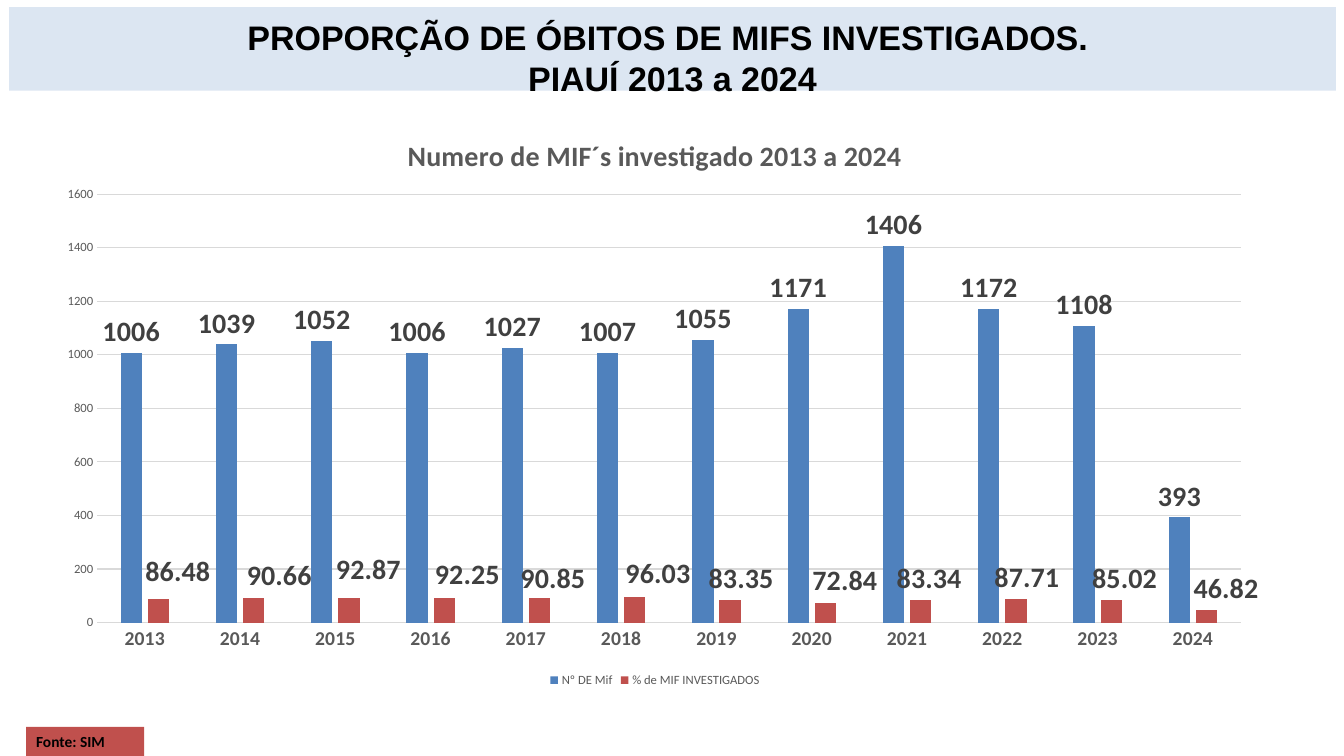
from lxml import etree
from pptx import Presentation
from pptx.chart.data import CategoryChartData
from pptx.dml.color import RGBColor
from pptx.enum.chart import XL_CHART_TYPE, XL_LABEL_POSITION, XL_LEGEND_POSITION, XL_TICK_MARK
from pptx.enum.shapes import MSO_SHAPE
from pptx.enum.text import MSO_ANCHOR, PP_ALIGN
from pptx.oxml.ns import qn
from pptx.util import Inches, Pt

HEADING = "PROPORÇÃO DE ÓBITOS DE MIFS INVESTIGADOS. \vPIAUÍ 2013 a 2024"
CHART_TITLE = "Numero de MIF´s investigado 2013 a 2024"
SOURCE = "Fonte: SIM"
YEARS = [str(year) for year in range(2013, 2025)]
SERIES = [
    ("Nº DE Mif", "4F81BD", [1006, 1039, 1052, 1006, 1027, 1007, 1055, 1171, 1406, 1172, 1108, 393]),
    ("% de MIF INVESTIGADOS", "C0504D",
     [86.48, 90.66, 92.87, 92.25, 90.85, 96.03, 83.35, 72.84, 83.34, 87.71, 85.02, 46.82]),
]
LABEL_SHIFTS = [
    (1.6, -1.2), (2.1, -0.3), (1.6, -1.2), (1.9, -0.3), (1.1, 0.3), (1.9, -0.3),
    (0.9, 0), (1.6, -0.3), (0.7, 0), (0.9, 0), (1.1, 0), (1.6, 0),
]
PLOT_SHARES = {"x": 4.4, "y": 13.9, "w": 93.5, "h": 74.2}
GREY, GRID, LABEL = "595959", "D9D9D9", "404040"


def color(value):
    return RGBColor.from_string(value)


def set_font(font, size, value, bold=False, name="Calibri"):
    font.name, font.size, font.bold = name, Pt(size), bold
    font.color.rgb = color(value)


def place(shape, left, top, width, height):
    shape.left, shape.top = Inches(left), Inches(top)
    shape.width, shape.height = Inches(width), Inches(height)


def set_fill(shape, value):
    shape.fill.solid()
    shape.fill.fore_color.rgb = color(value)


def manual_layout(settings, percents):
    layout = etree.Element(qn("c:layout"))
    manual = etree.SubElement(layout, qn("c:manualLayout"))
    for tag, value in settings.items():
        etree.SubElement(manual, qn(f"c:{tag}")).set("val", value)
    for tag, percent in percents.items():
        etree.SubElement(manual, qn(f"c:{tag}")).set("val", f"{percent / 100:.4f}")
    return layout


def add_heading(slide):
    title = slide.shapes.title
    place(title, 0.09, 0.07, 13.16, 0.83)
    set_fill(title, "DCE6F2")
    frame = title.text_frame
    frame.text = HEADING
    frame.vertical_anchor = MSO_ANCHOR.TOP
    frame.margin_top = Inches(0.09)
    paragraph = frame.paragraphs[0]
    paragraph.alignment = PP_ALIGN.CENTER
    paragraph.line_spacing = Pt(29.3)
    set_font(paragraph.font, 24.3, "000000", True, "Arial")


def add_source(slide):
    box = slide.shapes.add_shape(MSO_SHAPE.RECTANGLE, 0, 0, 0, 0)
    place(box, 0.26, 7.21, 1.17, 0.29)
    box.shadow.inherit = False
    set_fill(box, "C0504D")
    box.line.fill.background()
    box.text_frame.text = SOURCE
    paragraph = box.text_frame.paragraphs[0]
    paragraph.alignment = PP_ALIGN.LEFT
    set_font(paragraph.font, 11, "000000", True)


def style_axes(chart):
    for axis, size, bold in ((chart.category_axis, 14, True), (chart.value_axis, 9, False)):
        axis.major_tick_mark = axis.minor_tick_mark = XL_TICK_MARK.NONE
        set_font(axis.tick_labels.font, size, GREY, bold)
    values = chart.value_axis
    values.minimum_scale, values.maximum_scale, values.major_unit = 0, 1600, 200
    values.format.line.fill.background()
    for line in (chart.category_axis.format.line, values.major_gridlines.format.line):
        line.color.rgb = color(GRID)
        line.width = Pt(0.75)


def style_series(plot):
    for series, (_, value, _) in zip(plot.series, SERIES):
        set_fill(series.format, value)
        series.invert_if_negative = False
        labels = series.data_labels
        labels.show_value = True
        labels.position = XL_LABEL_POSITION.OUTSIDE_END
        set_font(labels.font, 20, LABEL, True)
    shares = plot.series[1]
    for index, (across, down) in enumerate(LABEL_SHIFTS):
        label = shares.points[index].data_label
        label.position = XL_LABEL_POSITION.OUTSIDE_END
        set_font(label.font, 20, LABEL, True)
    for element, (across, down) in zip(shares.data_labels._element.findall(qn("c:dLbl")), LABEL_SHIFTS):
        element.insert(1, manual_layout({}, {"x": across, "y": down}))


def add_deaths_chart(slide):
    data = CategoryChartData()
    data.categories = YEARS
    for name, _, values in SERIES:
        data.add_series(name, values)
    frame = slide.shapes.add_chart(
        XL_CHART_TYPE.COLUMN_CLUSTERED, Inches(0.43), Inches(1.13), Inches(12.13), Inches(5.73), data)
    chart = frame.chart
    set_font(chart.font, 10, "000000")
    chart.has_title = True
    chart.chart_title.include_in_layout = False
    chart.chart_title.text_frame.text = CHART_TITLE
    set_font(chart.chart_title.text_frame.paragraphs[0].font, 20, GREY, True)
    chart.has_legend = True
    chart.legend.position = XL_LEGEND_POSITION.BOTTOM
    chart.legend.include_in_layout = False
    set_font(chart.legend.font, 9, GREY)
    plot = chart.plots[0]
    plot.gap_width, plot.overlap, plot.vary_by_categories = 219, -27, False
    style_axes(chart)
    style_series(plot)
    area = chart.element.find(f".//{qn('c:plotArea')}") if hasattr(chart, "element") else chart._chartSpace.find(f".//{qn('c:plotArea')}")
    for layout in area.findall(qn("c:layout")):
        area.remove(layout)
    area.insert(0, manual_layout({"layoutTarget": "inner", "xMode": "edge", "yMode": "edge"}, PLOT_SHARES))


def main():
    presentation = Presentation()
    presentation.slide_width, presentation.slide_height = Inches(13.33), Inches(7.5)
    slide = presentation.slides.add_slide(presentation.slide_layouts[5])
    add_heading(slide)
    add_source(slide)
    add_deaths_chart(slide)
    presentation.save("out.pptx")


if __name__ == "__main__":
    main()
